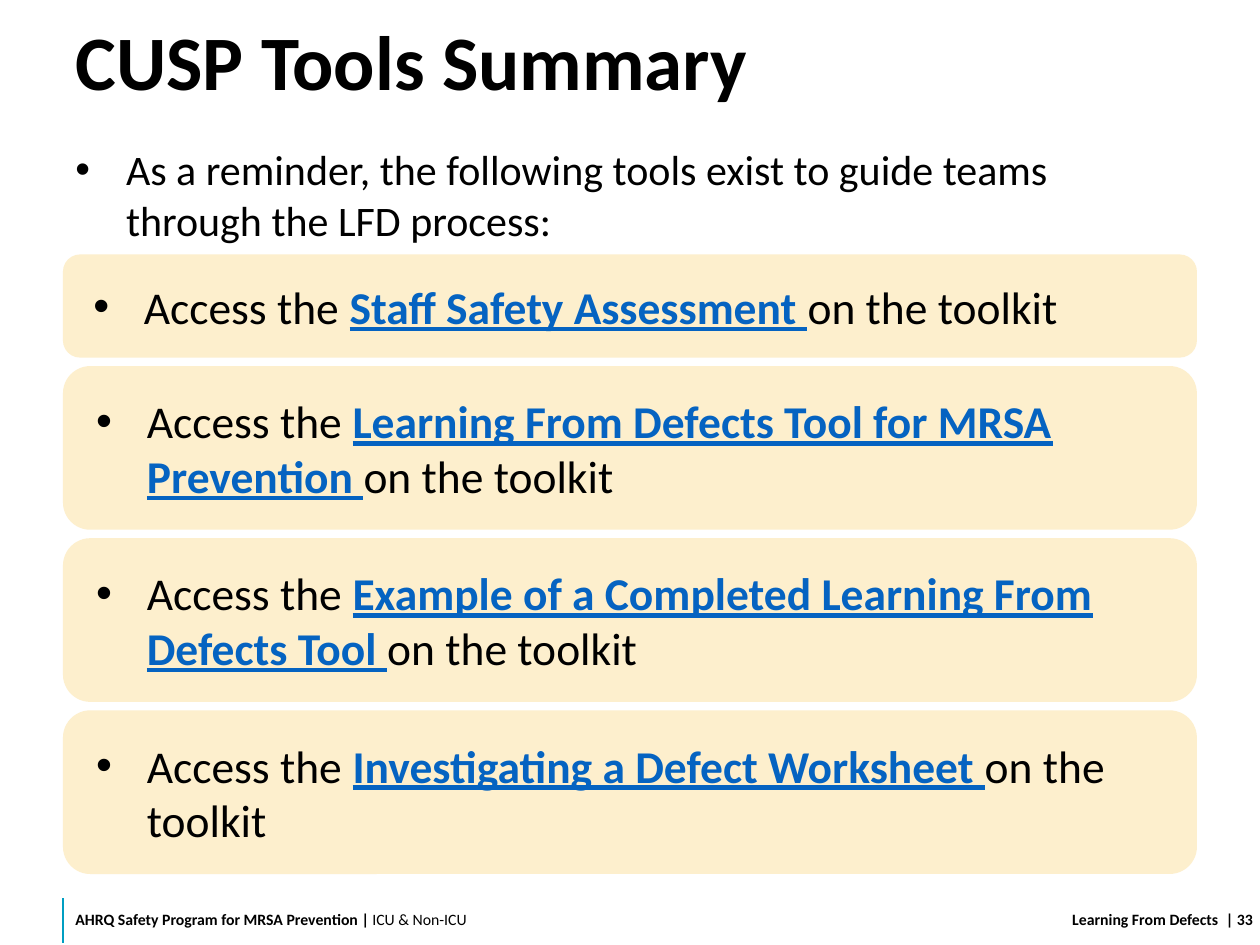
from lxml import etree
from pptx import Presentation
from pptx.dml.color import RGBColor
from pptx.enum.shapes import MSO_CONNECTOR, MSO_SHAPE
from pptx.enum.text import MSO_ANCHOR, MSO_AUTO_SIZE, PP_ALIGN
from pptx.oxml.ns import qn
from pptx.util import Cm, Pt

LEFT, RIGHT = PP_ALIGN.LEFT, PP_ALIGN.RIGHT
TOP, MIDDLE = MSO_ANCHOR.TOP, MSO_ANCHOR.MIDDLE
BLACK = RGBColor(0x00, 0x00, 0x00)
CREAM = RGBColor(0xFD, 0xEF, 0xCD)
LINK_BLUE = RGBColor(0x05, 0x63, 0xC1)
TEAL = RGBColor(0x00, 0x9E, 0xC2)
MARGIN, CONTENT_WIDTH = 1.27, 22.86


def write_text(shape, *runs, size, align=LEFT, anchor=MIDDLE,
               insets=(0.25, 0.13, 0.25, 0.13), line_spacing=1.0, bullet=False):
    frame = shape.text_frame
    frame.word_wrap = True
    frame.auto_size = MSO_AUTO_SIZE.NONE
    frame.vertical_anchor = anchor
    (frame.margin_left, frame.margin_top,
     frame.margin_right, frame.margin_bottom) = [Cm(inset) for inset in insets]
    paragraph = frame.paragraphs[0]
    paragraph.alignment = align
    paragraph.line_spacing = line_spacing
    paragraph.space_before = Pt(0)
    if bullet:
        properties = paragraph._p.get_or_add_pPr()
        properties.set("marL", str(Cm(1.02)))
        properties.set("indent", str(-Cm(1.02)))
        etree.SubElement(properties, qn("a:buFont")).set("typeface", "Arial")
        etree.SubElement(properties, qn("a:buChar")).set("char", "•")
    for text, bold, color in runs:
        run = paragraph.add_run()
        run.text = text
        run.font.name = "Calibri"
        run.font.size = Pt(size)
        run.font.bold = bold
        run.font.underline = color == LINK_BLUE
        run.font.color.rgb = color


presentation = Presentation()
presentation.slide_width = Cm(25.4)
presentation.slide_height = Cm(19.05)
slide = presentation.slides.add_slide(presentation.slide_layouts[1])

title = slide.shapes.title
title.left, title.top, title.width, title.height = Cm(MARGIN), Cm(0), Cm(CONTENT_WIDTH), Cm(2.54)
write_text(title, ("CUSP Tools Summary", True, BLACK), size=44,
           insets=(0.25, 0.25, 0.25, 0.13), line_spacing=0.9)

body = slide.placeholders[1]
body.left, body.top, body.width, body.height = Cm(MARGIN), Cm(2.77), Cm(CONTENT_WIDTH), Cm(14.48)
write_text(body, ("As a reminder, the following tools exist to guide teams through the LFD process:",
                  False, BLACK), size=24, anchor=TOP, bullet=True)

tools = [
    ("Staff Safety Assessment ", 2.08),
    ("Learning From Defects Tool for MRSA Prevention ", 3.3),
    ("Example of a Completed Learning From Defects Tool ", 3.3),
    ("Investigating a Defect Worksheet ", 3.3),
]
card_gap = 0.17
card_top = 5.13
for tool, card_height in tools:
    card = slide.shapes.add_shape(MSO_SHAPE.ROUNDED_RECTANGLE, Cm(MARGIN), Cm(card_top),
                                  Cm(CONTENT_WIDTH), Cm(card_height))
    card.shadow.inherit = False
    card.fill.solid()
    card.fill.fore_color.rgb = CREAM
    card.line.fill.background()
    write_text(card, ("Access the ", False, BLACK), (tool, True, LINK_BLUE),
               ("on the toolkit", False, BLACK), size=26,
               insets=(0.51, 0.38, 0.51, 0.38), bullet=True)
    card_top += card_height + card_gap

footer_rule = slide.shapes.add_connector(MSO_CONNECTOR.STRAIGHT, Cm(MARGIN), Cm(18.11),
                                         Cm(MARGIN), Cm(19))
footer_rule.line.color.rgb = TEAL
footer_rule.line.width = Pt(1)
etree.SubElement(footer_rule._element.spPr, qn("a:effectLst"))

footers = [
    (MARGIN, 10.41, LEFT, (0.25, 0, 0.25, 0),
     [("AHRQ Safety Program for MRSA Prevention | ", True, BLACK), ("ICU & Non-ICU", False, BLACK)]),
    (18.03, 6.6, RIGHT, (0.25, 0.13, 0, 0.13), [("Learning From Defects ", True, BLACK)]),
    (24.64, 0.76, LEFT, (0, 0.13, 0, 0.13), [(" | 33", True, BLACK)]),
]
for left, width, align, insets, runs in footers:
    footer = slide.shapes.add_textbox(Cm(left), Cm(18.03), Cm(width), Cm(1.02))
    write_text(footer, *runs, size=9, align=align, insets=insets)

presentation.save("out.pptx")
